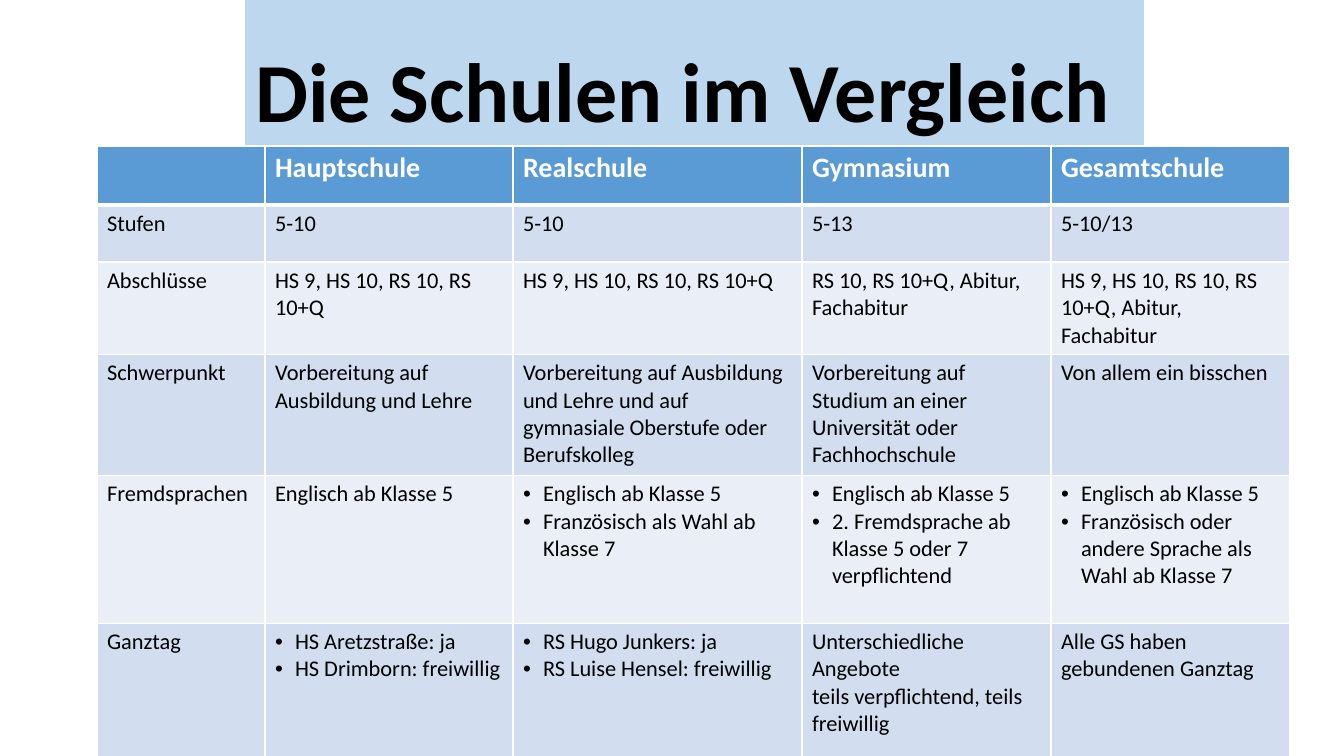
"""Builds a slide that compares German school types in a table."""
import pptx
import pptx.util
import pptx.dml.color
import pptx.enum.text
import pptx.oxml
import pptx.oxml.ns

PX = 12192000 / 1344
FONT = "Calibri"
COLORS = {"title": "BDD7EE", "head": "5B9BD5", "odd": "D2DEEF", "even": "EAEFF7",
          "white": "FFFFFF", "black": "000000"}
TITLE = "Die Schulen im Vergleich"
TITLE_BOX = (245, 0, 899, 146)
TABLE_ORIGIN = (97, 146)
COLUMN_WIDTHS = [168, 248, 289, 249, 239]
ROW_HEIGHTS = [59, 57, 91, 121, 148, 134]
BULLET_INDENT = 20

# A string is a plain paragraph, a tuple holds plain paragraphs, a list holds bullets.
ROWS = [
    ["", "Hauptschule", "Realschule", "Gymnasium", "Gesamtschule"],
    ["Stufen", "5-10", "5-10", "5-13", "5-10/13"],
    ["Abschlüsse", "HS 9, HS 10, RS 10, RS 10+Q", "HS 9, HS 10, RS 10, RS 10+Q",
     "RS 10, RS 10+Q, Abitur, Fachabitur",
     "HS 9, HS 10, RS 10, RS 10+Q, Abitur, Fachabitur"],
    ["Schwerpunkt", "Vorbereitung auf Ausbildung und Lehre",
     "Vorbereitung auf Ausbildung und Lehre und auf gymnasiale Oberstufe oder Berufskolleg",
     "Vorbereitung auf Studium an einer Universität oder Fachhochschule",
     "Von allem ein bisschen"],
    ["Fremdsprachen", "Englisch ab Klasse 5",
     ["Englisch ab Klasse 5", "Französisch als Wahl ab Klasse 7"],
     ["Englisch ab Klasse 5", "2. Fremdsprache ab Klasse 5 oder 7 verpflichtend"],
     ["Englisch ab Klasse 5", "Französisch oder andere Sprache als Wahl ab Klasse 7"]],
    ["Ganztag",
     ["HS Aretzstraße: ja", "HS Drimborn: freiwillig"],
     ["RS Hugo Junkers: ja", "RS Luise Hensel: freiwillig"],
     ("Unterschiedliche Angebote", "teils verpflichtend, teils freiwillig"),
     "Alle GS haben gebundenen Ganztag"],
]


def emu(px):
    return pptx.util.Emu(round(px * PX))


def paint(target, color):
    target.fill.solid()
    target.fill.fore_color.rgb = pptx.dml.color.RGBColor.from_string(COLORS[color])


def write(frame, text, size=16, color="black", bold=False, spacing=None):
    lines = [text] if isinstance(text, str) else text
    for index, line in enumerate(lines):
        para = frame.add_paragraph() if index else frame.paragraphs[0]
        para.alignment = pptx.enum.text.PP_ALIGN.LEFT
        para.line_spacing = spacing
        para.font.size = pptx.util.Pt(size)
        if line:
            span = para.add_run()
            span.text = line
            span.font.name = FONT
            span.font.size = pptx.util.Pt(size)
            span.font.bold = bold
            span.font.color.rgb = pptx.dml.color.RGBColor.from_string(COLORS[color])
        if isinstance(text, list):
            add_bullet(para)


def add_bullet(para):
    props = para._p.get_or_add_pPr()
    props.set("marL", str(emu(BULLET_INDENT)))
    props.set("indent", str(-emu(BULLET_INDENT)))
    for tag, name, value in (("buFont", "typeface", "Arial"), ("buChar", "char", "•")):
        pptx.oxml.ns.qn("a:" + tag)
        props.append(pptx.oxml.parse_xml(
            f'<a:{tag} {pptx.oxml.ns.nsdecls("a")} {name}="{value}"/>'))


def add_borders(cell, row):
    widths = {"lnL": 1, "lnR": 1, "lnT": 3 if row == 1 else 1, "lnB": 3 if row == 0 else 1}
    props = cell._tc.get_or_add_tcPr()
    for index, (tag, width) in enumerate(widths.items()):
        props.insert(index, pptx.oxml.parse_xml(
            f'<a:{tag} {pptx.oxml.ns.nsdecls("a")} w="{pptx.util.Pt(width)}">'
            f'<a:solidFill><a:srgbClr val="{COLORS["white"]}"/></a:solidFill></a:{tag}>'))


def add_title(page):
    title = page.shapes.title
    title.left, title.top, title.width, title.height = map(emu, TITLE_BOX)
    paint(title, "title")
    frame = title.text_frame
    frame.word_wrap = True
    frame.auto_size = pptx.enum.text.MSO_AUTO_SIZE.NONE
    frame.vertical_anchor = pptx.enum.text.MSO_ANCHOR.BOTTOM
    write(frame, TITLE, size=60, bold=True, spacing=0.9)


def add_comparison(page):
    size = (sum(COLUMN_WIDTHS), sum(ROW_HEIGHTS))
    table = page.shapes.add_table(len(ROWS), len(COLUMN_WIDTHS),
                                  *map(emu, TABLE_ORIGIN + size)).table
    for column, width in zip(table.columns, COLUMN_WIDTHS):
        column.width = emu(width)
    for row, (texts, height) in enumerate(zip(ROWS, ROW_HEIGHTS)):
        table.rows[row].height = emu(height)
        fill = "head" if row == 0 else "odd" if row % 2 else "even"
        style = {"size": 20, "color": "white", "bold": True} if row == 0 else {}
        for column, text in enumerate(texts):
            cell = table.cell(row, column)
            paint(cell, fill)
            add_borders(cell, row)
            write(cell.text_frame, text, **style)


def main():
    deck = pptx.Presentation()
    deck.slide_width, deck.slide_height = emu(1344), emu(756)
    page = deck.slides.add_slide(deck.slide_layouts[5])
    add_title(page)
    add_comparison(page)
    deck.save("out.pptx")


if __name__ == "__main__":
    main()
